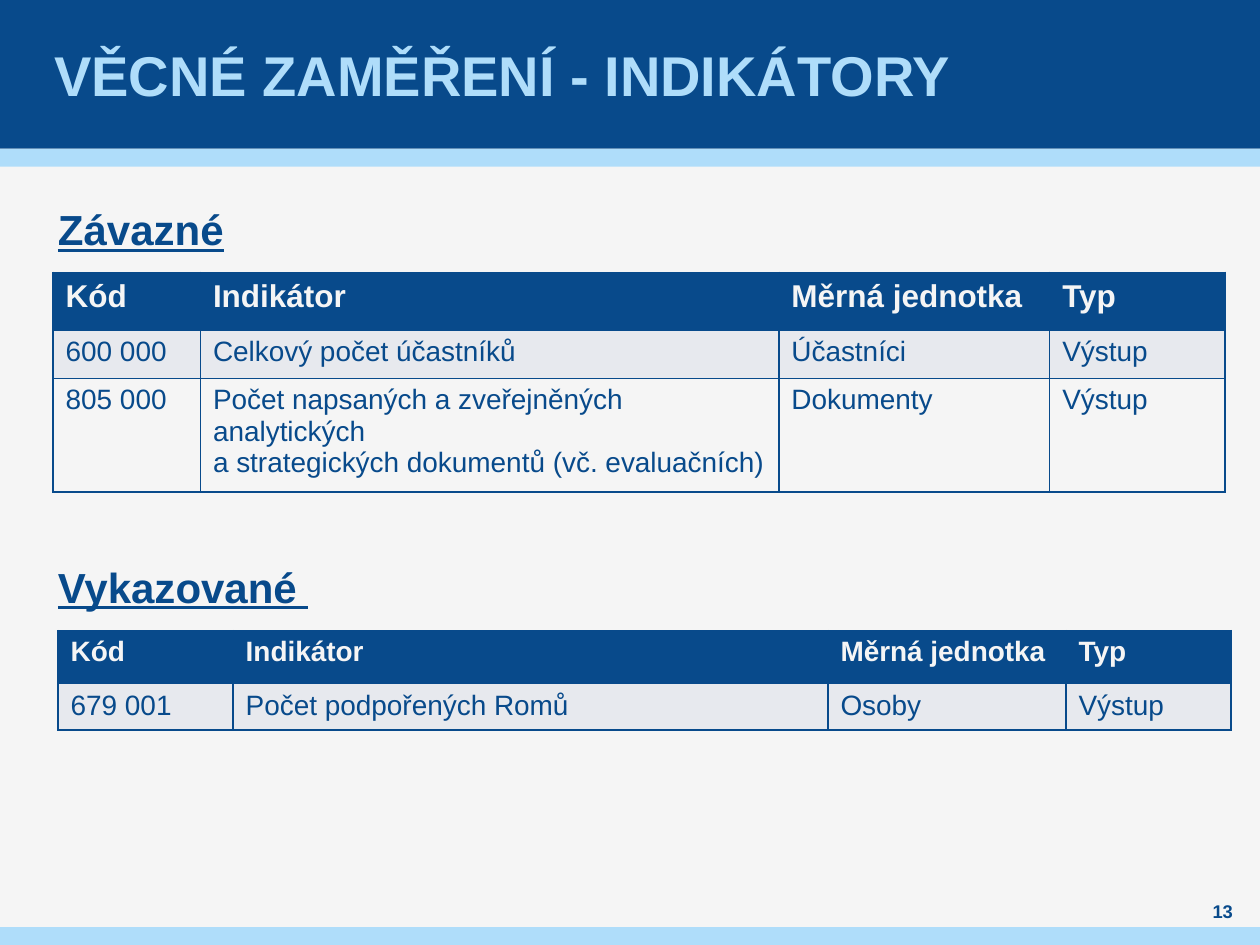
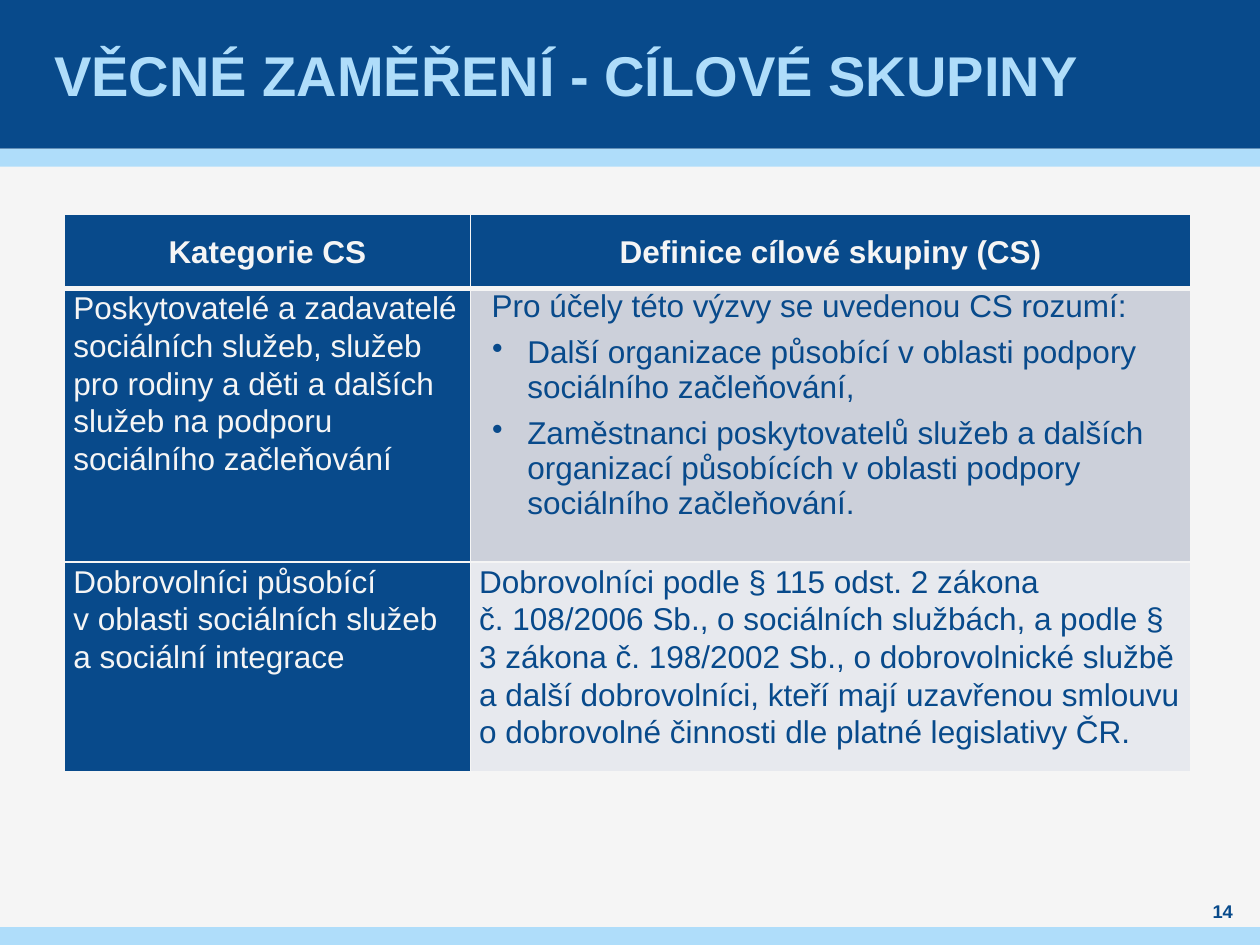
from copy import deepcopy

from lxml import etree
from pptx import Presentation
from pptx.dml.color import RGBColor
from pptx.enum import shapes, text
from pptx.oxml import ns
from pptx.util import Cm, Pt

COLORS = {
    "navy": "084A8B",
    "sky": "AFDDFA",
    "paper": "F5F5F5",
    "pale": "E7E9EE",
    "grey": "CCD0DA",
}
FONT = "Arial"
WIDTH, HEIGHT = Cm(25.4), Cm(19.05)
HEADER_HEIGHT, STRIPE_HEIGHT = Cm(3), Cm(0.36)
CELL_SPACING = {"space_before": Pt(3), "space_after": Pt(3)}
LOOSE = {**CELL_SPACING, "line_spacing": 1.07}
CENTERED = {**LOOSE, "alignment": text.PP_ALIGN.CENTER}


def rgb(name):
    return RGBColor.from_string(COLORS[name])


def set_values(target, values):
    for name, value in values.items():
        setattr(target, name, value)


def set_margins(target, horizontal, vertical=0):
    set_values(target, {"margin_left": horizontal, "margin_right": horizontal,
                        "margin_top": vertical, "margin_bottom": vertical})


def set_indent(paragraph, left, first=0, bullet=None):
    properties = paragraph._p.get_or_add_pPr()
    properties.set("marL", str(left))
    properties.set("indent", str(first))
    if bullet:
        etree.SubElement(properties, ns.qn("a:buChar")).set("char", bullet)


def set_border(cell, color, widths):
    """Draw the cell's edges; widths are points for left, right, top, bottom."""
    properties = cell._tc.get_or_add_tcPr()
    for index, (side, width) in enumerate(zip("LRTB", widths)):
        line = etree.Element(ns.qn(f"a:ln{side}"), w=str(Pt(width)))
        fill = etree.SubElement(line, ns.qn("a:solidFill"))
        etree.SubElement(fill, ns.qn("a:srgbClr")).set("val", COLORS[color])
        properties.insert(index, line)


class Deck:
    def __init__(self):
        self.presentation = Presentation()
        set_values(self.presentation,
                   {"slide_width": WIDTH, "slide_height": HEIGHT})
        self.layout = self.presentation.slide_layouts[5]
        background = self.layout.background.fill
        background.solid()
        background.fore_color.rgb = rgb("paper")
        self.slide = None

    def add_slide(self, title, number):
        first = self.slide is None
        self.slide = self.presentation.slides.add_slide(self.layout)
        if first:
            self.add_layout_band(HEADER_HEIGHT, STRIPE_HEIGHT, "sky")
            self.add_layout_band(0, HEADER_HEIGHT, "navy")
            self.add_layout_band(HEIGHT - STRIPE_HEIGHT, STRIPE_HEIGHT, "sky")
        self.format_title(title)
        self.add_page_number(number)

    def add_layout_band(self, top, height, color):
        """Draw a full-width band and move it to the shared layout."""
        band = self.slide.shapes.add_shape(
            shapes.MSO_SHAPE.RECTANGLE, 0, top, WIDTH, height)
        band.shadow.inherit = False
        band.fill.solid()
        band.fill.fore_color.rgb = rgb(color)
        band.line.fill.background()
        self.layout.shapes._spTree.insert(2, band._element)

    def put_text(self, paragraph, words, size, color, bold=False,
                 underline=None, layout=None):
        paragraph.text = words
        set_values(paragraph, layout or {})
        for run in paragraph.runs:
            set_values(run.font, {"name": FONT, "size": Pt(size), "bold": bold,
                                  "underline": underline})
            run.font.color.rgb = rgb(color)
        for line_break in paragraph._p.findall(ns.qn("a:br")):
            line_break.insert(0, deepcopy(paragraph.runs[0]._r.rPr))

    def format_title(self, words):
        title = self.slide.shapes.title
        set_values(title, {"left": Cm(0.99), "top": 0, "width": Cm(23.39),
                           "height": HEADER_HEIGHT})
        frame = title.text_frame
        set_values(frame, {"auto_size": text.MSO_AUTO_SIZE.NONE,
                           "word_wrap": True,
                           "vertical_anchor": text.MSO_ANCHOR.MIDDLE})
        set_margins(frame, Cm(0.1))
        self.put_text(frame.paragraphs[0], words, 32, "sky", bold=True,
                      layout={"alignment": text.PP_ALIGN.LEFT})

    def add_text(self, box, words, size, anchor, **style):
        frame = self.slide.shapes.add_textbox(*map(Cm, box)).text_frame
        set_values(frame, {"word_wrap": True, "vertical_anchor": anchor})
        set_margins(frame, 0)
        self.put_text(frame.paragraphs[0], words, size, "navy", bold=True,
                      **style)

    def add_page_number(self, number):
        self.add_text((24, 18.11, 1.3, 0.51), str(number), 10.5,
                      text.MSO_ANCHOR.MIDDLE,
                      layout={"alignment": text.PP_ALIGN.CENTER})

    def add_heading(self, top, words):
        self.add_text((1.17, top, 23.39, 1.2), words, 24, text.MSO_ANCHOR.TOP,
                      underline=True,
                      layout={"line_spacing": Pt(28.8), "space_before": Pt(6),
                              "space_after": Pt(6)})

    def add_table(self, left, top, columns, rows):
        """Add an empty table; columns and rows are sizes in centimetres."""
        frame = self.slide.shapes.add_table(
            len(rows), len(columns), Cm(left), Cm(top),
            Cm(sum(columns)), Cm(sum(rows)))
        table = frame.table
        for column, width in zip(table.columns, columns):
            column.width = Cm(width)
        for row, height in zip(table.rows, rows):
            row.height = Cm(height)
        return table

    def fill_cell(self, cell, fill, border, widths=(1, 1, 1, 1)):
        cell.fill.solid()
        cell.fill.fore_color.rgb = rgb(fill)
        set_border(cell, border, widths)

    def add_indicator_table(self, left, top, columns, rows, records, header_size):
        table = self.add_table(left, top, columns, rows)
        header = ("Kód", "Indikátor", "Měrná jednotka", "Typ")
        fills = ("navy", "pale", "paper")
        for r, (record, fill) in enumerate(zip((header, *records), fills)):
            for c, words in enumerate(record):
                cell = table.cell(r, c)
                self.fill_cell(cell, fill, "navy")
                self.put_text(cell.text_frame.paragraphs[0], words,
                              16 if r else header_size,
                              "navy" if r else "paper", bold=r == 0)

    def add_group_table(self, left, top, columns, rows, header, records):
        """Add the target-group table; a list in a cell is an intro and bullets."""
        table = self.add_table(left, top, columns, rows)
        fills = (("navy", "navy"), ("navy", "grey"), ("navy", "pale"))
        for r, record in enumerate((header, *records)):
            widths = (1, 1, 3 if r == 1 else 1, 3 if r == 0 else 1)
            for c, content in enumerate(record):
                cell = table.cell(r, c)
                self.fill_cell(cell, fills[r][c], "paper", widths)
                set_margins(cell, Cm(0.18))
                color = "navy" if r and c else "paper"
                if isinstance(content, list):
                    self.put_bullets(cell.text_frame, content, color)
                    continue
                if r == 0:
                    cell.vertical_anchor = text.MSO_ANCHOR.MIDDLE
                self.put_text(cell.text_frame.paragraphs[0], content, 18, color,
                              bold=r == 0, layout=LOOSE if r else CENTERED)

    def put_bullets(self, frame, lines, color):
        for index, words in enumerate(lines):
            paragraph = frame.add_paragraph() if index else frame.paragraphs[0]
            self.put_text(paragraph, words, 18, color, layout=CELL_SPACING)
            if index:
                set_indent(paragraph, Cm(0.97), Cm(-0.71), "•")
            else:
                set_indent(paragraph, Cm(0.25))


def build_indicators(deck):
    deck.add_slide("VĚCNÉ ZAMĚŘENÍ - INDIKÁTORY", 13)
    deck.add_heading(4.11, "Závazné")
    deck.add_indicator_table(
        1.07, 5.49, (2.97, 11.66, 5.46, 3.53), (1.17, 0.97, 2.13),
        [("600 000", "Celkový počet účastníků", "Účastníci", "Výstup"),
         ("805 000", "Počet napsaných a zveřejněných analytických \n"
                     "a strategických dokumentů (vč. evaluačních)",
          "Dokumenty", "Výstup")],
        header_size=18)
    deck.add_heading(11.31, "Vykazované ")
    deck.add_indicator_table(
        1.17, 12.71, (3.53, 11.99, 4.8, 3.33), (1.07, 0.88),
        [("679 001", "Počet podpořených Romů", "Osoby", "Výstup")],
        header_size=16)


def build_target_groups(deck):
    deck.add_slide("VĚCNÉ ZAMĚŘENÍ - CÍLOVÉ SKUPINY", 14)
    deck.add_group_table(
        1.3, 4.32, (8.18, 14.53), (1.5, 5.51, 4.22),
        ("Kategorie CS", "Definice cílové skupiny (CS)"),
        [("Poskytovatelé a zadavatelé sociálních služeb, služeb pro rodiny "
          "a děti a dalších služeb na podporu sociálního začleňování",
          ["Pro účely této výzvy se uvedenou CS rozumí:",
           "Další organizace působící v oblasti podpory sociálního "
           "začleňování,",
           "Zaměstnanci poskytovatelů služeb a dalších organizací působících "
           "v oblasti podpory sociálního začleňování."]),
         ("Dobrovolníci působící \nv oblasti sociálních služeb \n"
          "a sociální integrace",
          "Dobrovolníci podle § 115 odst. 2 zákona \n"
          "č. 108/2006 Sb., o sociálních službách, a podle § 3 zákona "
          "č. 198/2002 Sb., o dobrovolnické službě a další dobrovolníci, "
          "kteří mají uzavřenou smlouvu o dobrovolné činnosti dle platné "
          "legislativy ČR.")])


def main():
    deck = Deck()
    build_indicators(deck)
    build_target_groups(deck)
    deck.presentation.save("out.pptx")


if __name__ == "__main__":
    main()
